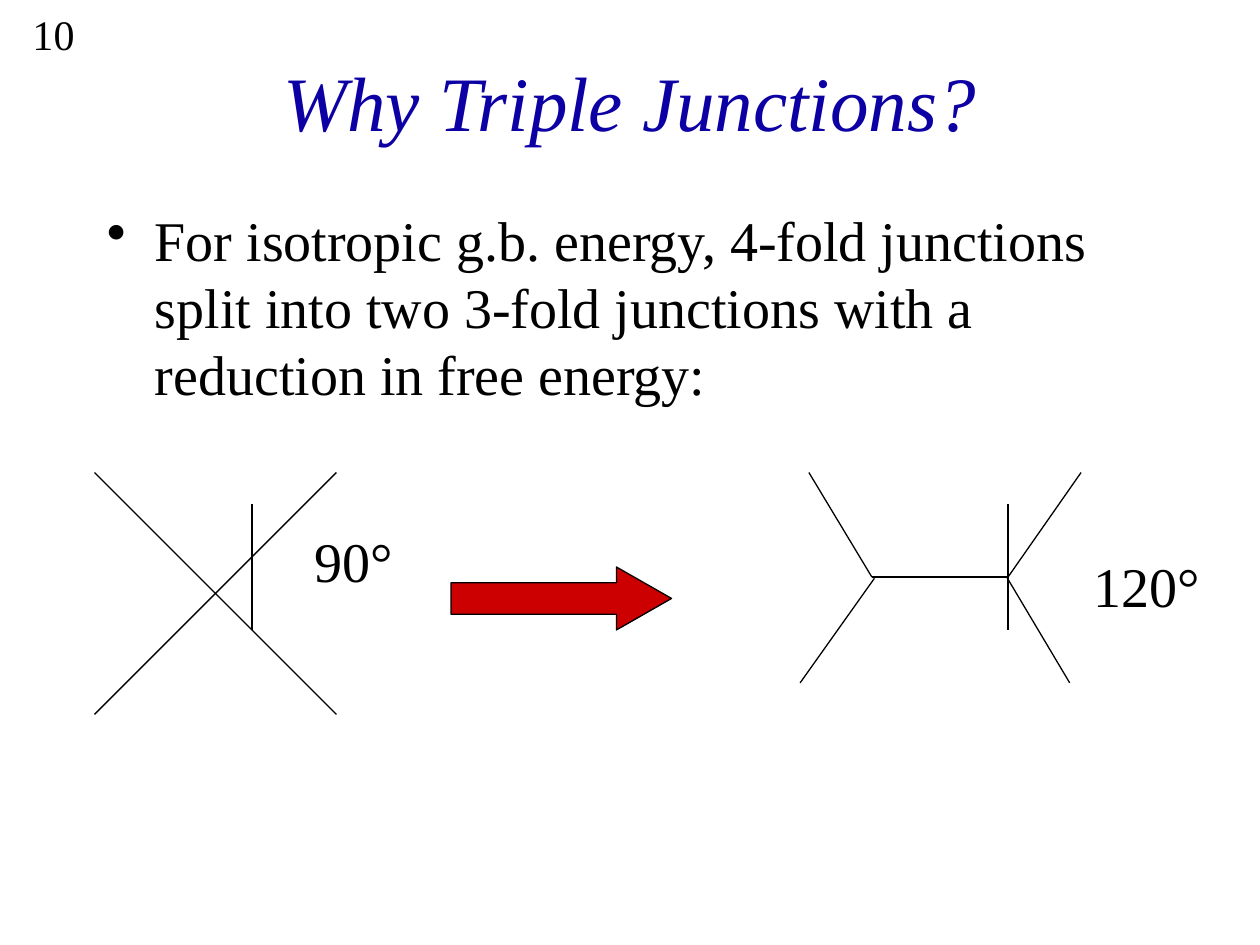
from dataclasses import dataclass

from lxml.etree import SubElement
from pptx import Presentation
from pptx.dml.color import RGBColor
from pptx.enum.shapes import MSO_CONNECTOR as Connector, MSO_SHAPE as Shape
from pptx.enum.text import MSO_ANCHOR as Anchor, MSO_AUTO_SIZE as AutoSize, PP_ALIGN as Align
from pptx.oxml.ns import qn
from pptx.util import Inches, Pt

COLORS = {"ink": "000000", "title": "0C00A4", "arrow": "CC0000"}
FONT = "Times New Roman"
CURVE_STEPS = 12

Point = tuple[float, float]


@dataclass
class Boundary:
    start: Point
    end: Point


@dataclass
class AngleArc:
    start: Point
    curves: list[tuple[Point, Point, Point]]


@dataclass
class AngleLabel:
    text: str
    box: tuple[float, float, float, float]


BOUNDARIES = [
    Boundary((0.75, 3.75), (2.67, 5.67)),
    Boundary((0.75, 5.67), (2.67, 3.75)),
    Boundary((6.92, 4.58), (8, 4.58)),
    Boundary((8, 4.58), (8.58, 3.75)),
    Boundary((6.35, 5.42), (6.94, 4.59)),
    Boundary((6.92, 4.58), (6.42, 3.75)),
    Boundary((8.49, 5.42), (7.99, 4.58)),
]
ARCS = [
    AngleArc((1.92, 4.5), [
        ((1.94, 4.52), (1.97, 4.54), (2, 4.58)),
        ((2.03, 4.62), (2.08, 4.69), (2.08, 4.75)),
        ((2.08, 4.81), (2.04, 4.86), (2, 4.92)),
    ]),
    AngleArc((8.25, 4.25), [
        ((8.28, 4.29), (8.31, 4.33), (8.33, 4.4)),
        ((8.36, 4.47), (8.43, 4.6), (8.42, 4.7)),
        ((8.4, 4.8), (8.33, 4.9), (8.25, 5)),
    ]),
]
LABELS = [
    AngleLabel("90°", (2.4, 4.13, 0.82, 0.63)),
    AngleLabel("120°", (8.58, 4.33, 1.05, 0.63)),
]


def rgb(name: str) -> RGBColor:
    return RGBColor.from_string(COLORS[name])


def set_outline(line) -> None:
    line.color.rgb = rgb("ink")
    line.width = Pt(0.75)


def add_text(slide, text: str, box: tuple[float, float, float, float], *,
             size: float = 32, color: str = "ink", italic: bool = False,
             align: Align = Align.LEFT, anchor: Anchor = Anchor.TOP,
             wrap: bool = True, grow: bool = False, bullet: bool = False) -> None:
    frame = slide.shapes.add_textbox(*map(Inches, box)).text_frame
    frame.word_wrap = wrap
    frame.vertical_anchor = anchor
    frame.auto_size = AutoSize.SHAPE_TO_FIT_TEXT if grow else AutoSize.NONE
    paragraph = frame.paragraphs[0]
    paragraph.alignment = align
    run = paragraph.add_run()
    run.text = text
    run.font.name = FONT
    run.font.size = Pt(size)
    run.font.italic = italic
    run.font.color.rgb = rgb(color)
    if bullet:
        paragraph.space_before = Pt(size * 0.2)
        properties = paragraph._p.get_or_add_pPr()
        properties.set("marL", str(Inches(0.38)))
        properties.set("indent", str(Inches(-0.38)))
        SubElement(properties, qn("a:buChar")).set("char", "•")


def add_boundary(slide, boundary: Boundary) -> None:
    ends = map(Inches, boundary.start + boundary.end)
    connector = slide.shapes.add_connector(Connector.STRAIGHT, *ends)
    set_outline(connector.line)
    SubElement(connector._element.spPr, qn("a:effectLst"))


def curve_points(start: Point, first: Point, second: Point, end: Point) -> list[Point]:
    points = []
    for step in range(1, CURVE_STEPS + 1):
        t = step / CURVE_STEPS
        weights = ((1 - t) ** 3, 3 * t * (1 - t) ** 2, 3 * t ** 2 * (1 - t), t ** 3)
        points.append(tuple(
            sum(weight * value for weight, value in zip(weights, axis))
            for axis in zip(start, first, second, end)
        ))
    return points


def add_arc(slide, arc: AngleArc) -> None:
    points = [arc.start]
    for curve in arc.curves:
        points += curve_points(points[-1], *curve)
    builder = slide.shapes.build_freeform(*arc.start, scale=Inches(1))
    builder.add_line_segments(points[1:], close=False)
    outline = builder.convert_to_shape()
    outline.shadow.inherit = False
    outline.fill.background()
    set_outline(outline.line)


def add_split_arrow(slide) -> None:
    arrow = slide.shapes.add_shape(
        Shape.RIGHT_ARROW, Inches(3.58), Inches(4.5), Inches(1.75), Inches(0.5))
    arrow.adjustments[0] = 0.5
    arrow.adjustments[1] = 0.875
    arrow.shadow.inherit = False
    arrow.fill.solid()
    arrow.fill.fore_color.rgb = rgb("arrow")
    set_outline(arrow.line)


def main() -> None:
    deck = Presentation()
    deck.slide_width, deck.slide_height = Inches(10), Inches(7.5)
    slide = deck.slides.add_slide(deck.slide_layouts[6])
    add_text(slide, "10", (0.02, 0.02, 0.67, 0.42), size=24, align=Align.RIGHT)
    add_text(slide, "Why Triple Junctions?", (0.75, 0.17, 8.5, 1.25), size=44,
             color="title", italic=True, align=Align.CENTER, anchor=Anchor.MIDDLE)
    add_text(slide, "For isotropic g.b. energy, 4-fold junctions split into two "
             "3-fold junctions with a reduction in free energy:",
             (0.75, 1.58, 8.5, 1.25), bullet=True)
    for boundary in BOUNDARIES:
        add_boundary(slide, boundary)
    add_split_arrow(slide)
    for arc in ARCS:
        add_arc(slide, arc)
    for label in LABELS:
        add_text(slide, label.text, label.box, wrap=False, grow=True)
    deck.save("out.pptx")


if __name__ == "__main__":
    main()
